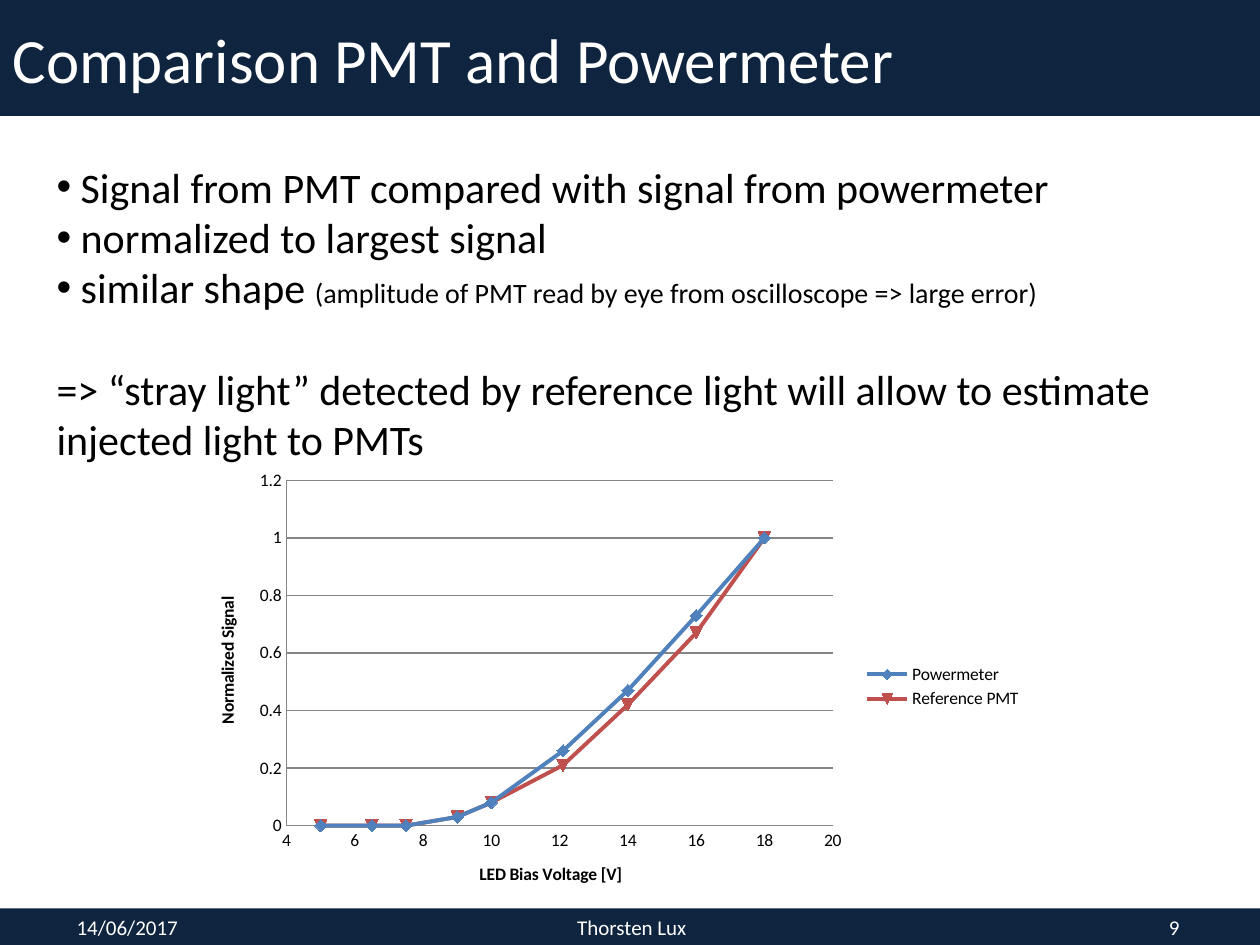
from lxml import etree
from pptx import Presentation
from pptx.chart.data import XyChartData
from pptx.dml.color import RGBColor
from pptx.enum.chart import XL_CHART_TYPE as ChartType, XL_LEGEND_POSITION as LegendPosition
from pptx.enum.chart import XL_MARKER_STYLE as MarkerStyle, XL_TICK_MARK as TickMark
from pptx.enum.shapes import MSO_SHAPE as ShapeType
from pptx.enum.text import MSO_ANCHOR as Anchor, PP_ALIGN as Align
from pptx.oxml import parse_xml
from pptx.oxml.ns import nsdecls, qn
from pptx.util import Inches, Pt

NAVY = RGBColor(0x0F, 0x24, 0x3E)
WHITE = RGBColor(0xFF, 0xFF, 0xFF)
BLACK = RGBColor(0x00, 0x00, 0x00)
GRAY = RGBColor(0x86, 0x86, 0x86)
BLUE = RGBColor(0x4F, 0x81, 0xBD)
RED = RGBColor(0xC0, 0x50, 0x4D)
FONT = "Calibri"


def add_run(paragraph, text, size, color, bold=False):
    run = paragraph.add_run()
    run.text = text
    run.font.name = FONT
    run.font.size = Pt(size)
    run.font.bold = bold
    run.font.color.rgb = color


presentation = Presentation()
presentation.slide_width = Inches(10)
presentation.slide_height = Inches(7.5)
slide = presentation.slides.add_slide(presentation.slide_layouts[5])
shapes = slide.shapes

title = shapes.title
title.left, title.top, title.width, title.height = 0, 0, Inches(10), Inches(0.92)
title.text_frame.vertical_anchor = Anchor.MIDDLE
title_paragraph = title.text_frame.paragraphs[0]
title_paragraph.alignment = Align.LEFT
add_run(title_paragraph, "Comparison PMT and Powermeter", 36, WHITE)

for top, height in [(0, 0.92), (7.21, 0.29)]:
    band = shapes.add_shape(ShapeType.RECTANGLE, 0, Inches(top), Inches(10), Inches(height))
    band.shadow.inherit = False
    band.fill.solid()
    band.fill.fore_color.rgb = NAVY
    band.line.fill.background()
    title.element.addprevious(band.element)

voltages = [5, 6.5, 7.5, 9, 10, 12.1, 14, 16, 18]
signals = {
    "Powermeter": [0, 0, 0, 0.03, 0.08, 0.26, 0.47, 0.73, 1],
    "Reference PMT": [0, 0, 0, 0.03, 0.08, 0.21, 0.42, 0.67, 1],
}
chart_data = XyChartData()
for name, values in signals.items():
    series_data = chart_data.add_series(name)
    for voltage, value in zip(voltages, values):
        series_data.add_data_point(voltage, value)

chart = shapes.add_chart(
    ChartType.XY_SCATTER_SMOOTH, Inches(1.54), Inches(3.67), Inches(6.67), Inches(3.56), chart_data
).chart
chart.font.name = FONT
chart.font.size = Pt(10)
chart.font.color.rgb = BLACK
chart.has_title = False
chart.has_legend = True
chart.legend.position = LegendPosition.RIGHT
chart.legend.include_in_layout = False
chart.plots[0].vary_by_categories = False

for series, color in zip(chart.plots[0].series, [BLUE, RED]):
    series.smooth = True
    series.format.line.color.rgb = color
    series.format.line.width = Pt(2.25)
    series.marker.size = 7
    series.marker.format.fill.solid()
    series.marker.format.fill.fore_color.rgb = color
    series.marker.format.line.color.rgb = color
chart.plots[0].series[0].marker.style = MarkerStyle.DIAMOND

for axis, text, low, high, step in [
    (chart.category_axis, "LED Bias Voltage [V]", 4, 20, 2),
    (chart.value_axis, "Normalized Signal", 0, 1.2, 0.2),
]:
    axis.minimum_scale, axis.maximum_scale, axis.major_unit = low, high, step
    axis.major_tick_mark = axis.minor_tick_mark = TickMark.NONE
    axis.has_major_gridlines = axis is chart.value_axis
    axis.format.line.color.rgb = GRAY
    axis.tick_labels.number_format = "General"
    axis.tick_labels.number_format_is_linked = False
    add_run(axis.axis_title.text_frame.paragraphs[0], text, 10, BLACK, bold=True)
chart.value_axis.major_gridlines.format.line.color.rgb = GRAY

plot_area = chart.plots[0]._element.getparent()
for layout in plot_area.findall(qn("c:layout")):
    plot_area.remove(layout)
plot_area.insert(0, parse_xml(
    f'<c:layout {nsdecls("c")}><c:manualLayout><c:layoutTarget val="inner"/>'
    '<c:xMode val="edge"/><c:yMode val="edge"/><c:x val="0.11"/><c:y val="0.04"/>'
    '<c:w val="0.65"/><c:h val="0.77"/></c:manualLayout></c:layout>'
))

for text, left, width, alignment in [
    ("14/06/2017", 0.51, 2.33, Align.LEFT),
    ("Thorsten Lux", 3.43, 3.17, Align.CENTER),
    ("9", 7.13, 2.33, Align.RIGHT),
]:
    footer = shapes.add_textbox(Inches(left), Inches(7.21), Inches(width), Inches(0.29))
    footer.text_frame.word_wrap = True
    footer.text_frame.vertical_anchor = Anchor.MIDDLE
    footer.text_frame.paragraphs[0].alignment = alignment
    add_run(footer.text_frame.paragraphs[0], text, 12, WHITE)

body = shapes.add_textbox(Inches(0.35), Inches(1.23), Inches(9.21), Inches(2.52)).text_frame
body.word_wrap = True
bullets = [
    [(" Signal from PMT compared with signal from powermeter", 24)],
    [(" normalized to largest signal", 24)],
    [(" similar shape ", 24),
     ("(amplitude of PMT read by eye from oscilloscope => large error)", 16)],
]
paragraph = body.paragraphs[0]
for runs in bullets:
    properties = paragraph._p.get_or_add_pPr()
    etree.SubElement(properties, qn("a:buFont"), typeface="Arial")
    etree.SubElement(properties, qn("a:buChar"), char="•")
    for text, size in runs:
        add_run(paragraph, text, size, BLACK)
    paragraph = body.add_paragraph()
paragraph.space_before = Pt(29)
add_run(
    paragraph,
    "=> “stray light” detected by reference light will allow to estimate injected light to PMTs",
    24, BLACK,
)

presentation.save("out.pptx")
